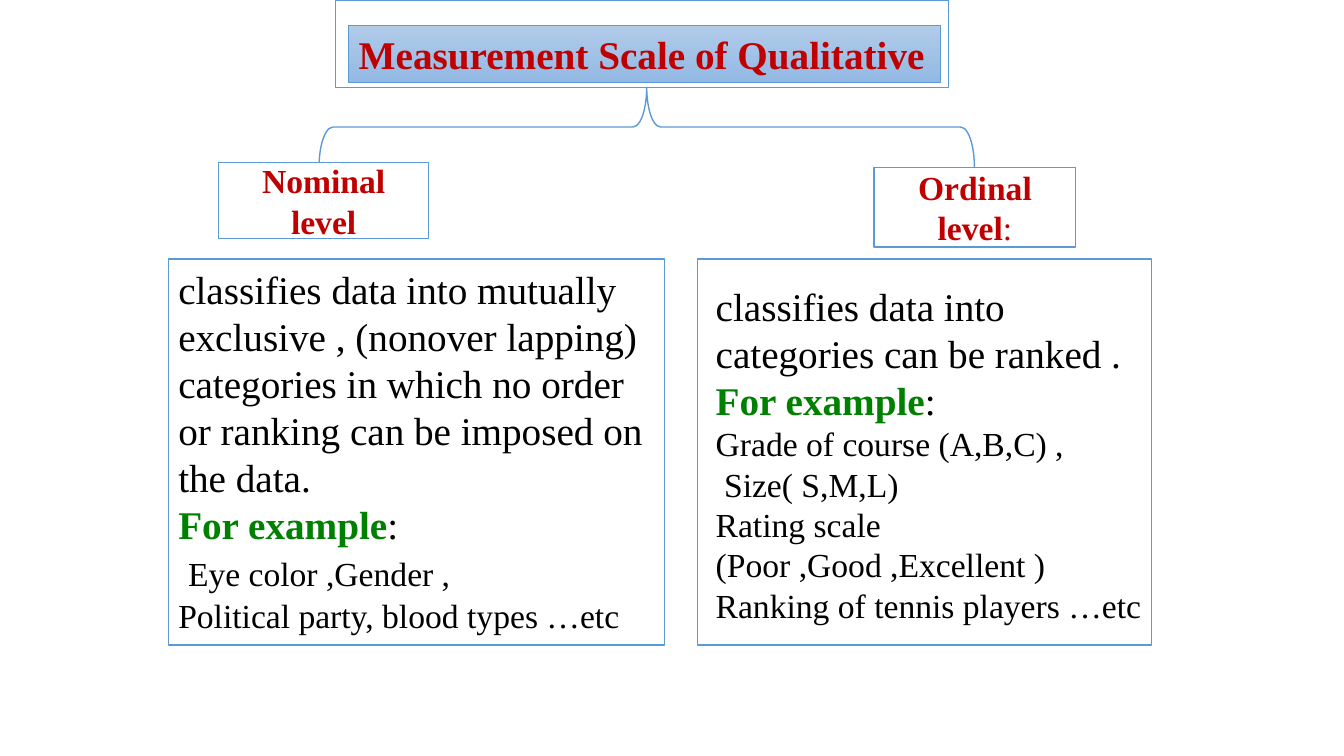
from dataclasses import dataclass

from pptx import Presentation
from pptx.dml.color import RGBColor
from pptx.enum.shapes import MSO_SHAPE
from pptx.enum.text import MSO_ANCHOR, PP_ALIGN
from pptx.util import Inches, Pt


@dataclass(frozen=True)
class Theme:
    """Colours, type sizes and font of the slide."""
    font: str = "Times New Roman"
    white: str = "FFFFFF"
    line: str = "5B9BD5"
    gradient: tuple = ("B1CBE9", "93B9E4")
    heading: str = "C00000"
    example: str = "008000"
    body: str = "000000"
    large: int = 28
    small: int = 24


THEME = Theme()
HEADING = (THEME.small, THEME.heading, True)
TITLE = (THEME.large, THEME.heading, True)
LARGE = (THEME.large, THEME.body, False)
SMALL = (THEME.small, THEME.body, False)
EXAMPLE = [
    ("For example", (THEME.large, THEME.example, True)),
    (":", LARGE),
]
NOMINAL = [
    [("classifies data into mutually exclusive , (nonover lapping) "
      "categories in which no order or ranking can be imposed on the data.", LARGE)],
    EXAMPLE,
    [(" ", LARGE), ("Eye color ,Gender ,", SMALL)],
    [("Political party, blood types …etc", SMALL)],
]
ORDINAL = [
    [("classifies data into categories can be ranked .", LARGE)],
    EXAMPLE,
    [("Grade of course (A,B,C) ,", SMALL)],
    [(" Size( S,M,L)", SMALL)],
    [("Rating scale\v(Poor ,Good ,Excellent )", SMALL)],
    [("Ranking of tennis players …etc", SMALL)],
]


def add_outline(page, preset, left, top, width, height, weight=1):
    """Add a white preset shape with a blue outline."""
    shape = page.shapes.add_shape(
        preset, Inches(left), Inches(top), Inches(width), Inches(height))
    shape.shadow.inherit = False
    shape.fill.solid()
    shape.fill.fore_color.rgb = RGBColor.from_string(THEME.white)
    shape.line.color.rgb = RGBColor.from_string(THEME.line)
    shape.line.width = Pt(weight)
    return shape


def write_spans(para, spans, align):
    """Write styled spans into one paragraph, breaking lines at vertical tabs."""
    para.alignment = align
    for text, (size, color, bold) in spans:
        for index, piece in enumerate(text.split("\v")):
            if index:
                para.add_line_break()
            span = para.add_run()
            span.text = piece
            span.font.name = THEME.font
            span.font.size = Pt(size)
            span.font.bold = bold
            span.font.color.rgb = RGBColor.from_string(color)


def write_paragraphs(frame, paragraphs, align=PP_ALIGN.LEFT,
                     anchor=MSO_ANCHOR.TOP, wrap=True):
    """Fill a text frame with paragraphs of styled spans."""
    frame.word_wrap = wrap
    frame.vertical_anchor = anchor
    for index, spans in enumerate(paragraphs):
        para = frame.add_paragraph() if index else frame.paragraphs[0]
        write_spans(para, spans, align)


def add_title(page):
    """Add the framed gradient title bar."""
    bar = add_outline(page, MSO_SHAPE.RECTANGLE, 3.46, 0.25, 5.87, 0.57, 0.5)
    bar.fill.gradient()
    bar.fill.gradient_angle = 270
    for stop, color in zip(bar.fill.gradient_stops, THEME.gradient):
        stop.color.rgb = RGBColor.from_string(color)
    write_paragraphs(bar.text_frame, [[("Measurement Scale of Qualitative", TITLE)]],
                     wrap=False)


def add_brace(page):
    """Add the brace that joins the title to both levels."""
    brace = add_outline(page, MSO_SHAPE.RIGHT_BRACE, 6.02, -1.99, 0.79, 6.5)
    brace.rotation = 270
    brace.adjustments[0] = 0.174


def add_level(page, left, top, width, height, spans):
    """Add the centred name box of a level."""
    box = add_outline(page, MSO_SHAPE.RECTANGLE, left, top, width, height)
    write_paragraphs(box.text_frame, [spans], PP_ALIGN.CENTER, MSO_ANCHOR.MIDDLE)


def add_description(page, left, top, width, height, paragraphs):
    """Add the text that describes a level."""
    box = page.shapes.add_textbox(
        Inches(left), Inches(top), Inches(width), Inches(height))
    write_paragraphs(box.text_frame, paragraphs)


def main():
    """Build the slide and save it."""
    deck = Presentation()
    deck.slide_width, deck.slide_height = Inches(13.33), Inches(7.5)
    page = deck.slides.add_slide(deck.slide_layouts[6])
    add_outline(page, MSO_SHAPE.RECTANGLE, 3.33, 0, 6.08, 0.87)
    add_brace(page)
    add_level(page, 2.17, 1.61, 2.08, 0.76, [("Nominal level", HEADING)])
    add_level(page, 8.67, 1.66, 2, 0.79,
              [("Ordinal level", HEADING), (":", (THEME.small, THEME.heading, False))])
    for left, width in ((1.67, 4.92), (6.92, 4.5)):
        add_outline(page, MSO_SHAPE.RECTANGLE, left, 2.57, width, 3.83)
    add_title(page)
    add_description(page, 1.67, 2.58, 5, 3.8, NOMINAL)
    add_description(page, 7, 2.75, 4.58, 3.53, ORDINAL)
    deck.save("out.pptx")


if __name__ == "__main__":
    main()
